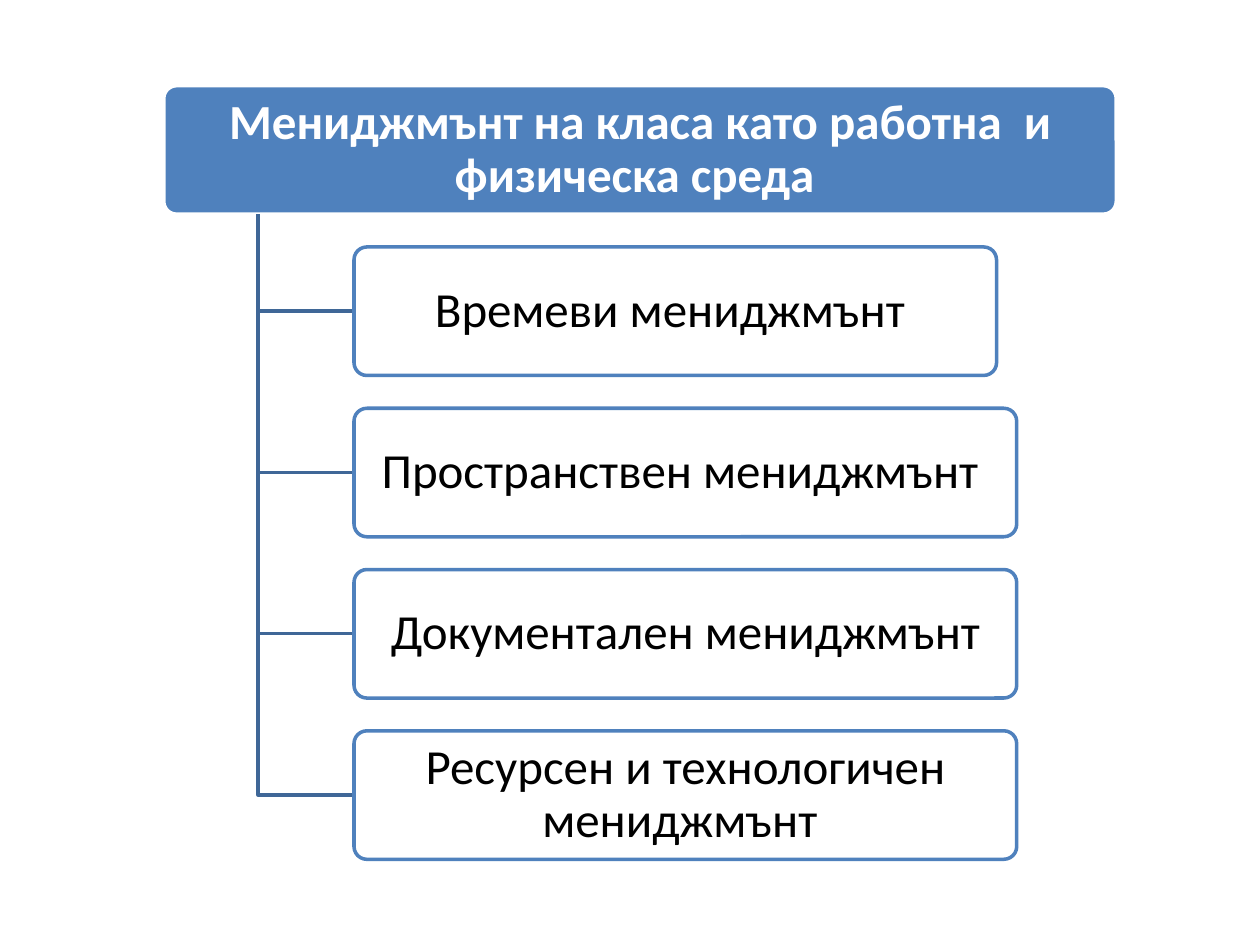
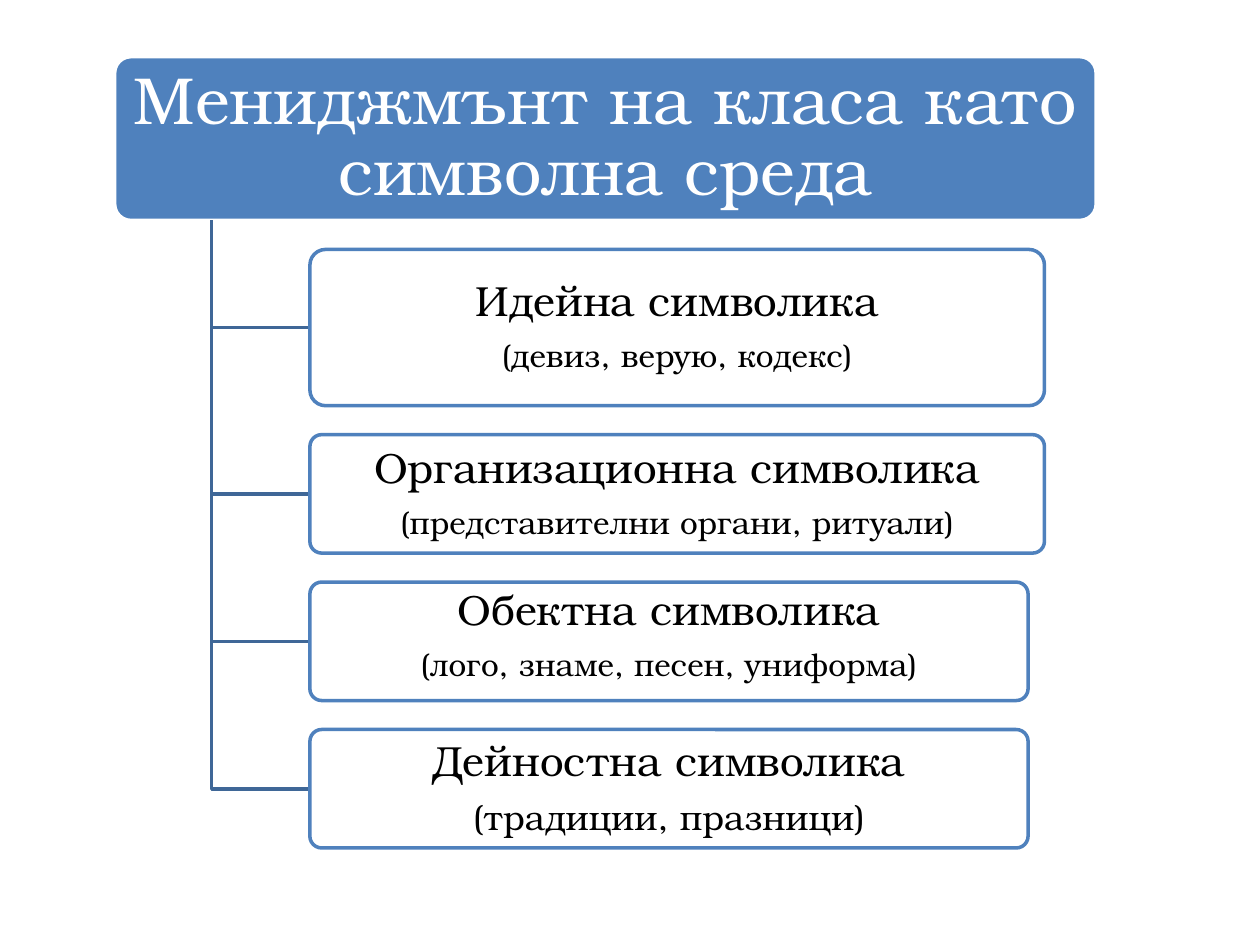
from dataclasses import dataclass

from lxml import etree
from pptx import Presentation
from pptx.dml.color import RGBColor
from pptx.enum.shapes import MSO_SHAPE
from pptx.enum.text import MSO_ANCHOR, PP_ALIGN
from pptx.oxml.ns import qn
from pptx.util import Pt

ROUND = MSO_SHAPE.ROUNDED_RECTANGLE
CENTER = PP_ALIGN.CENTER
TOP = MSO_ANCHOR.TOP
MIDDLE = MSO_ANCHOR.MIDDLE
SCALE = 9144


@dataclass(frozen=True)
class Theme:
    blue: RGBColor = RGBColor(0x4F, 0x81, 0xBD)
    stem: RGBColor = RGBColor(0x3F, 0x67, 0x97)
    white: RGBColor = RGBColor(0xFF, 0xFF, 0xFF)
    black: RGBColor = RGBColor(0, 0, 0)
    sans: str = "Calibri"
    serif: str = "TeX Gyre Bonum"
    title: int = 38
    body: int = 28
    item: int = 24
    hint: int = 18
    large: int = 20
    rule: int = 2
    lead: float = 0.9
    after: float = 0.35
    curve: float = 0.1
    alpha: int = 90


THEME = Theme()

WORK = dict(
    font=THEME.sans,
    head=dict(
        box=(130, 68, 756, 102),
        rows=[("Мениджмънт на класа като работна  и физическа среда ", THEME.body)],
        bold=True,
        pad=(6, 4),
    ),
    top=196,
    gap=26,
    pad=(6, 4),
    items=[
        (510, 102, MIDDLE, [("Времеви мениджмънт ", THEME.body)]),
        (526, 102, MIDDLE, [("Пространствен мениджмънт ", THEME.body)]),
        (526, 102, MIDDLE, [("Документален мениджмънт", THEME.body)]),
        (526, 102, MIDDLE, [("Ресурсен и технологичен мениджмънт ", THEME.body)]),
    ],
)

SYMBOL = dict(
    font=THEME.serif,
    head=dict(
        box=(91, 45, 779, 130),
        rows=[("Мениджмънт на класа като символна среда", THEME.title)],
        bold=False,
        pad=(8, 5),
    ),
    top=198,
    gap=23,
    pad=(5, 3),
    items=[
        (583, 124, MIDDLE, [("Идейна символика", THEME.item),
                            ("(девиз, верую, кодекс)", THEME.hint)]),
        (583, 94, MIDDLE, [("Организационна символика", THEME.item),
                           ("(представителни органи, ритуали)", THEME.hint)]),
        (570, 94, TOP, [("Обектна символика", THEME.item),
                        ("(лого, знаме, песен, униформа)", THEME.hint)]),
        (570, 94, MIDDLE, [("Дейностна символика", THEME.item),
                           ("(традиции, празници)", THEME.large)]),
    ],
)


def px(size):
    return size * SCALE


def put(item, values):
    for name, value in values.items():
        setattr(item, name, value)


def edge(shape, color):
    shape.shadow.inherit = False
    shape.line.color.rgb = color
    shape.line.width = Pt(THEME.rule)


def fade(shape):
    color = shape.fill._xPr.find(qn("a:solidFill"))[0]
    etree.SubElement(color, qn("a:alpha"), val=str(THEME.alpha * 1000))


def write(shape, rows, font, color, pad, anchor=MIDDLE, bold=False):
    frame = shape.text_frame
    wide, high = map(px, pad)
    put(frame, dict(word_wrap=True, vertical_anchor=anchor,
                    margin_left=wide, margin_right=wide,
                    margin_top=high, margin_bottom=high))
    for index, (text, size) in enumerate(rows):
        para = frame.add_paragraph() if index else frame.paragraphs[0]
        put(para, dict(alignment=CENTER, line_spacing=THEME.lead,
                       space_after=Pt(size * THEME.after)))
        run = para.add_run()
        run.text = text
        put(run.font, dict(name=font, size=Pt(size), bold=bold))
        run.font.color.rgb = color


def card(shapes, box, fill, line):
    shape = shapes.add_shape(ROUND, *map(px, box))
    shape.adjustments[0] = THEME.curve
    shape.fill.solid()
    shape.fill.fore_color.rgb = fill
    edge(shape, line)
    return shape


def elbow(shapes, start, end):
    path = shapes.build_freeform(*start, scale=SCALE)
    path.add_line_segments([(start[0], end[1]), end], close=False)
    shape = path.convert_to_shape()
    shape.fill.background()
    edge(shape, THEME.stem)


def tree(deck, data):
    slide = deck.slides.add_slide(deck.slide_layouts[6])
    shapes = slide.shapes.add_group_shape().shapes
    head, font = data["head"], data["font"]
    left, top, width, height = head["box"]
    title = card(shapes, head["box"], THEME.blue, THEME.white)
    write(title, head["rows"], font, THEME.white, head["pad"], bold=head["bold"])
    stem = (left + width // 10, top + height)
    side = left + width // 5
    y = data["top"]
    for wide, high, anchor, rows in data["items"]:
        elbow(shapes, stem, (side, y + high // 2))
        shape = card(shapes, (side, y, wide, high), THEME.white, THEME.blue)
        fade(shape)
        write(shape, rows, font, THEME.black, data["pad"], anchor)
        y += high + data["gap"]


def main():
    deck = Presentation()
    put(deck, dict(slide_width=px(1000), slide_height=px(750)))
    for data in (WORK, SYMBOL):
        tree(deck, data)
    deck.save("out.pptx")


if __name__ == "__main__":
    main()
